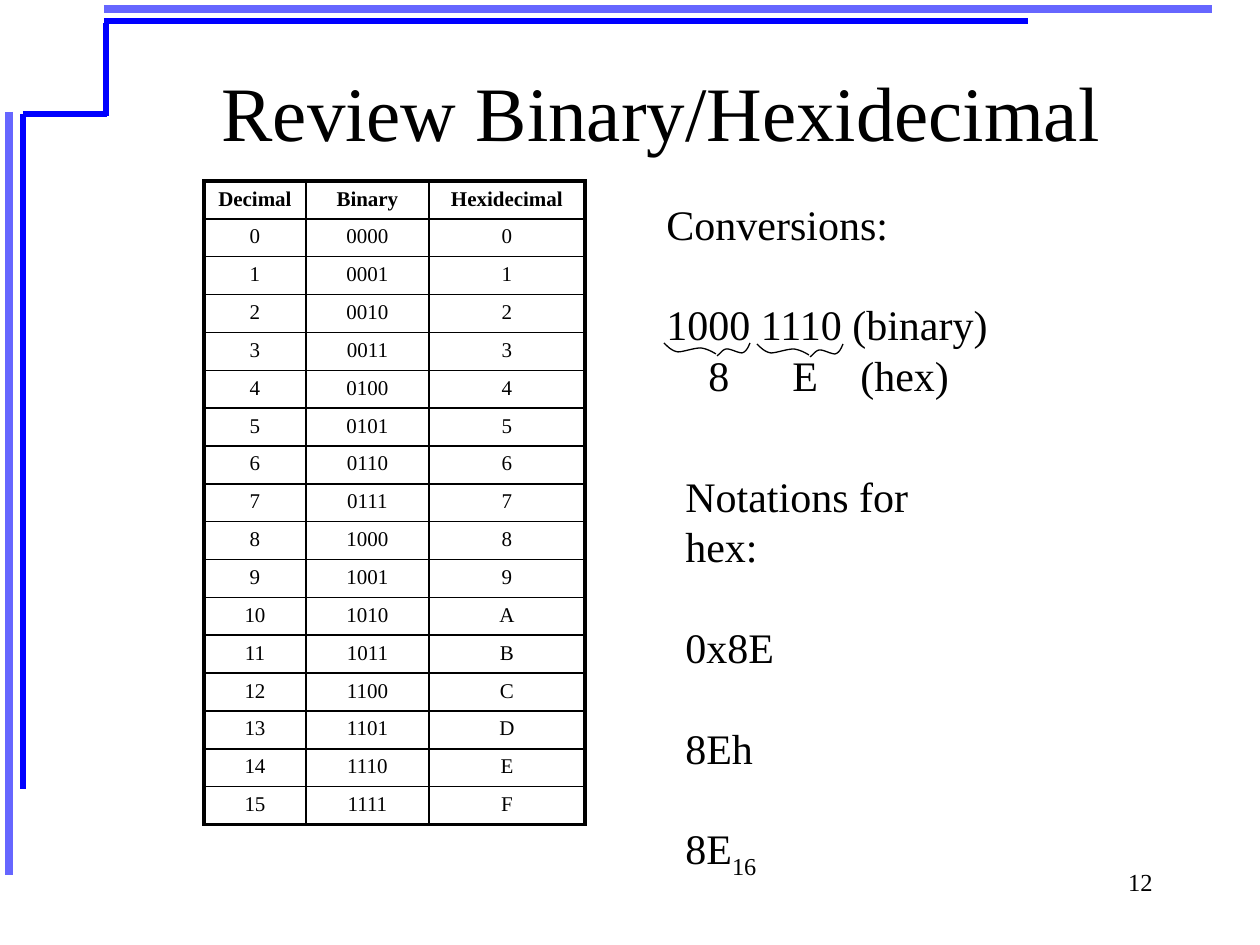
from lxml import etree
from pptx import Presentation, util as u
from pptx.dml.color import RGBColor
from pptx.enum import shapes, text
from pptx.oxml.ns import qn

PX = u.Inches(1) / 126
THEME = {
    "font": "Times New Roman", "ink": "000000", "pale": "6666FF", "blue": "0000FF",
    "title": 44, "body": 24, "cell": 12, "number": 14,
    "pale_rule": 4.5, "blue_rule": 3, "frame": 2.25, "grid": 1, "brace": 0.75,
}


def px(*lengths):
    return [round(length * PX) for length in lengths]


def write(frame, lines, size, align=text.PP_ALIGN.LEFT, anchor=text.MSO_ANCHOR.TOP,
          bold=False, gaps=(), tabs=()):
    frame.word_wrap = True
    frame.vertical_anchor = anchor
    for i, line in enumerate(lines):
        paragraph = frame.paragraphs[0] if i == 0 else frame.add_paragraph()
        paragraph.alignment = align
        if i in gaps:
            paragraph.space_before = u.Pt(size * 1.2)
        if "\t" in line:
            stops = etree.SubElement(paragraph._p.get_or_add_pPr(), qn("a:tabLst"))
            for stop in px(*tabs):
                etree.SubElement(stops, qn("a:tab"), pos=str(stop), algn="l")
        run = paragraph.add_run()
        run.text = line
        run.font.name = THEME["font"]
        run.font.size = u.Pt(size)
        run.font.bold = bold
        run.font.color.rgb = RGBColor.from_string(THEME["ink"])
    return frame.paragraphs[-1]


deck = Presentation()
deck.slide_width, deck.slide_height = px(1260, 945)
slide = deck.slides.add_slide(deck.slide_layouts[6])

rules = [
    ("pale", 9, 112, 9, 875),
    ("pale", 104, 9, 1212, 9),
    ("blue", 23, 114, 23, 789),
    ("blue", 104, 21, 1028, 21),
    ("blue", 23, 114, 107, 114),
    ("blue", 106, 116, 106, 23),
]
for tone, *ends in rules:
    rule = slide.shapes.add_connector(shapes.MSO_CONNECTOR.STRAIGHT, *px(*ends))
    rule.line.color.rgb = RGBColor.from_string(THEME[tone])
    rule.line.width = u.Pt(THEME[tone + "_rule"])
    etree.SubElement(rule._element.spPr, qn("a:effectLst"))

title = slide.shapes.add_textbox(*px(126, 32, 1071, 157))
write(title.text_frame, ["Review Binary/Hexidecimal"], THEME["title"],
      align=text.PP_ALIGN.CENTER, anchor=text.MSO_ANCHOR.MIDDLE)

rows = [("Decimal", "Binary", "Hexidecimal")]
rows += [(str(n), f"{n:04b}", f"{n:X}") for n in range(16)]
column_widths = px(102, 123, 156)
left, top, width, height = px(204, 181, 381, 643)
numbers = slide.shapes.add_table(len(rows), 3, left, top, width, height).table
numbers.first_row = numbers.horz_banding = False
for column, column_width in zip(numbers.columns, column_widths):
    column.width = column_width
for r, row in enumerate(rows):
    numbers.rows[r].height = height // len(rows)
    for c, value in enumerate(row):
        cell = numbers.cell(r, c)
        write(cell.text_frame, [value], THEME["cell"],
              align=text.PP_ALIGN.CENTER, bold=r == 0)
        outer = {"L": c == 0, "R": c == 2, "T": r == 0, "B": r == len(rows) - 1}
        props = cell._tc.get_or_add_tcPr()
        for side, is_outer in outer.items():
            weight = u.Pt(THEME["frame" if is_outer else "grid"])
            border = etree.SubElement(props, qn(f"a:ln{side}"), w=str(weight))
            paint = etree.SubElement(border, qn("a:solidFill"))
            etree.SubElement(paint, qn("a:srgbClr"), val=THEME["ink"])
        cell.fill.background()

conversions = slide.shapes.add_textbox(*px(654, 192, 349, 214))
write(conversions.text_frame,
      ["Conversions:", "1000 1110 (binary)", "\t8\tE\t(hex)"],
      THEME["body"], gaps=(1,), tabs=(42, 126, 194))

brace_halves = [
    [(0, 0), (4, 4), (8, 8), (14, 9), (19, 9), (30, 5), (37, 5), (43, 6), (47, 8), (52, 11)],
    [(86, 0), (84, 5), (82, 9), (78, 10), (74, 10), (67, 6), (63, 6), (59, 6), (57, 10), (53, 13)],
]
STEPS = 8
for brace_x, brace_y in [(664, 343), (757, 344)]:
    for half in brace_halves:
        knots = [(brace_x + x, brace_y + y) for x, y in half]
        curve = []
        for k in range(0, len(knots) - 1, 3):
            for step in range(1, STEPS + 1):
                t = step / STEPS
                weights = ((1 - t) ** 3, 3 * t * (1 - t) ** 2, 3 * t * t * (1 - t), t ** 3)
                curve.append(px(*(sum(w * p[axis] for w, p in zip(weights, knots[k:k + 4]))
                                  for axis in (0, 1))))
        pen = slide.shapes.build_freeform(*px(*knots[0]))
        pen.add_line_segments(curve, close=False)
        brace = pen.convert_to_shape()
        brace.shadow.inherit = False
        brace.fill.background()
        brace.line.color.rgb = RGBColor.from_string(THEME["ink"])
        brace.line.width = u.Pt(THEME["brace"])

notations = slide.shapes.add_textbox(*px(673, 464, 330, 416))
last_notation = write(notations.text_frame, ["Notations for hex:", "0x8E", "8Eh", "8E"],
                      THEME["body"], gaps=(1, 2, 3))
base = last_notation.add_run()
base.text = "16"
base.font.name = THEME["font"]
base.font.size = u.Pt(THEME["body"])
base.font.color.rgb = RGBColor.from_string(THEME["ink"])
base._r.get_or_add_rPr().set("baseline", "-25000")

slide_number = slide.shapes.add_textbox(*px(903, 861, 262, 63))
write(slide_number.text_frame, ["12"], THEME["number"], align=text.PP_ALIGN.RIGHT)

deck.save("out.pptx")
